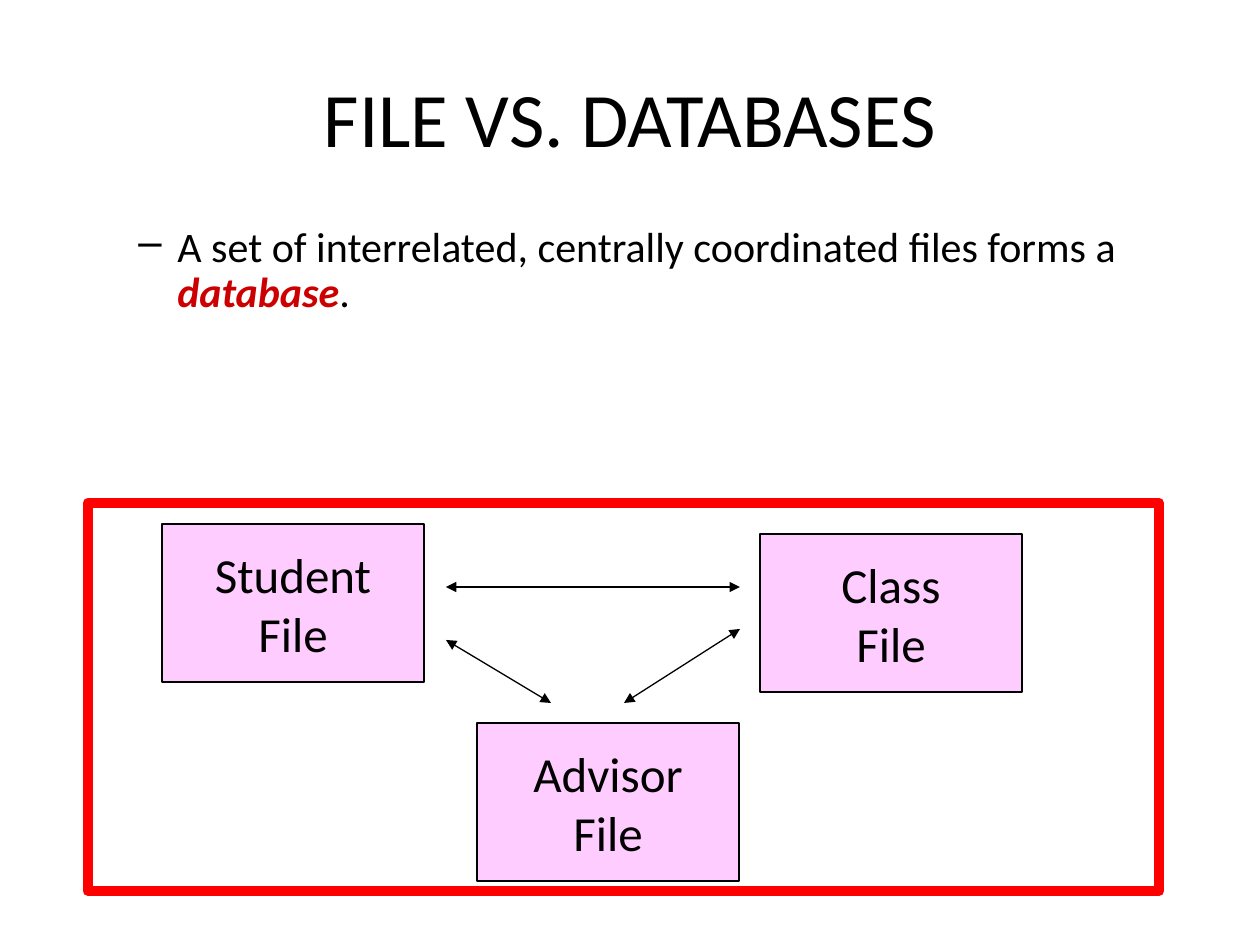
import dataclasses

import pptx
import pptx.dml.color
import pptx.enum.shapes
import pptx.enum.text
import pptx.oxml.ns
import pptx.util
from lxml import etree

EMU_PER_PX = 914400 / 126
ALIGN = pptx.enum.text.PP_ALIGN
ANCHOR = pptx.enum.text.MSO_ANCHOR


@dataclasses.dataclass(frozen=True)
class Theme:
    font: str = "Calibri"
    ink: str = "000000"
    accent: str = "CC0000"
    file_fill: str = "FFCCFF"
    frame_line: str = "FF0000"
    title_size: int = 44
    body_size: int = 24
    file_size: int = 28
    thin: float = 0.75
    thick: float = 6


def px(length):
    return pptx.util.Emu(round(length * EMU_PER_PX))


def rgb(value):
    return pptx.dml.color.RGBColor.from_string(value)


def add_child(parent, tag, **attributes):
    return etree.SubElement(parent, pptx.oxml.ns.qn(tag), attributes)


def write(paragraph, text, *, font, size, color, bold=False, italic=False):
    run = paragraph.add_run()
    run.text = text
    run.font.name = font
    run.font.size = pptx.util.Pt(size)
    run.font.color.rgb = rgb(color)
    run.font.bold = bold
    run.font.italic = italic


class SlideBuilder:
    def __init__(self, slide, theme):
        self.slide = slide
        self.theme = theme

    def text_frame(self, left, top, width, height, anchor):
        box = self.slide.shapes.add_textbox(px(left), px(top), px(width), px(height))
        frame = box.text_frame
        frame.word_wrap = True
        frame.vertical_anchor = anchor
        return frame

    def title(self, text, *bounds):
        heading = self.text_frame(*bounds, ANCHOR.MIDDLE).paragraphs[0]
        heading.alignment = ALIGN.CENTER
        write(heading, text, font=self.theme.font, size=self.theme.title_size, color=self.theme.ink)

    def dash_item(self, parts, *bounds):
        statement = self.text_frame(*bounds, ANCHOR.TOP).paragraphs[0]
        statement.line_spacing = 0.9
        statement.space_before = pptx.util.Pt(self.theme.body_size * 0.2)
        properties = statement._p.get_or_add_pPr()
        properties.set("marL", str(px(102)))
        properties.set("indent", str(px(-39)))
        add_child(properties, "a:buChar", char="–")
        for text, emphasis in parts:
            write(statement, text, font=self.theme.font, size=self.theme.body_size,
                  color=self.theme.accent if emphasis else self.theme.ink,
                  bold=emphasis, italic=emphasis)

    def rectangle(self, left, top, width, height, line, weight, fill=None):
        shape = self.slide.shapes.add_shape(
            pptx.enum.shapes.MSO_SHAPE.RECTANGLE, px(left), px(top), px(width), px(height))
        shape.shadow.inherit = False
        shape.line.color.rgb = rgb(line)
        shape.line.width = pptx.util.Pt(weight)
        if fill:
            shape.fill.solid()
            shape.fill.fore_color.rgb = rgb(fill)
        else:
            shape.fill.background()
        return shape

    def file_box(self, lines, left, top):
        box = self.rectangle(left, top, 262, 158, self.theme.ink, self.theme.thin, self.theme.file_fill)
        frame = box.text_frame
        frame.word_wrap = False
        frame.vertical_anchor = ANCHOR.MIDDLE
        for index, text in enumerate(lines):
            label = frame.add_paragraph() if index else frame.paragraphs[0]
            label.alignment = ALIGN.CENTER
            write(label, text, font=self.theme.font, size=self.theme.file_size, color=self.theme.ink)

    def two_way_arrow(self, *ends):
        arrow = self.slide.shapes.add_connector(
            pptx.enum.shapes.MSO_CONNECTOR.STRAIGHT, *map(px, ends))
        arrow.line.color.rgb = rgb(self.theme.ink)
        arrow.line.width = pptx.util.Pt(self.theme.thin)
        outline = arrow.line._get_or_add_ln()
        for end in ("a:headEnd", "a:tailEnd"):
            add_child(outline, end, type="triangle")
        add_child(arrow._element.spPr, "a:effectLst")


def main():
    presentation = pptx.Presentation()
    presentation.slide_width = px(1260)
    presentation.slide_height = px(945)
    builder = SlideBuilder(presentation.slides.add_slide(presentation.slide_layouts[6]), Theme())

    builder.title("FILE VS. DATABASES", 63, 38, 1134, 158)
    builder.dash_item([
        ("A set of interrelated, centrally coordinated files forms a ", False),
        ("database", True),
        (".", False),
    ], 63, 220, 1134, 251)

    for owner, left, top in [("Student", 162, 524), ("Class", 760, 534), ("Advisor", 477, 723)]:
        builder.file_box([owner, "File"], left, top)

    for ends in [(446, 587, 740, 587), (446, 640, 551, 703), (624, 703, 740, 629)]:
        builder.two_way_arrow(*ends)

    builder.rectangle(88, 503, 1071, 388, builder.theme.frame_line, builder.theme.thick)
    presentation.save("out.pptx")


if __name__ == "__main__":
    main()
